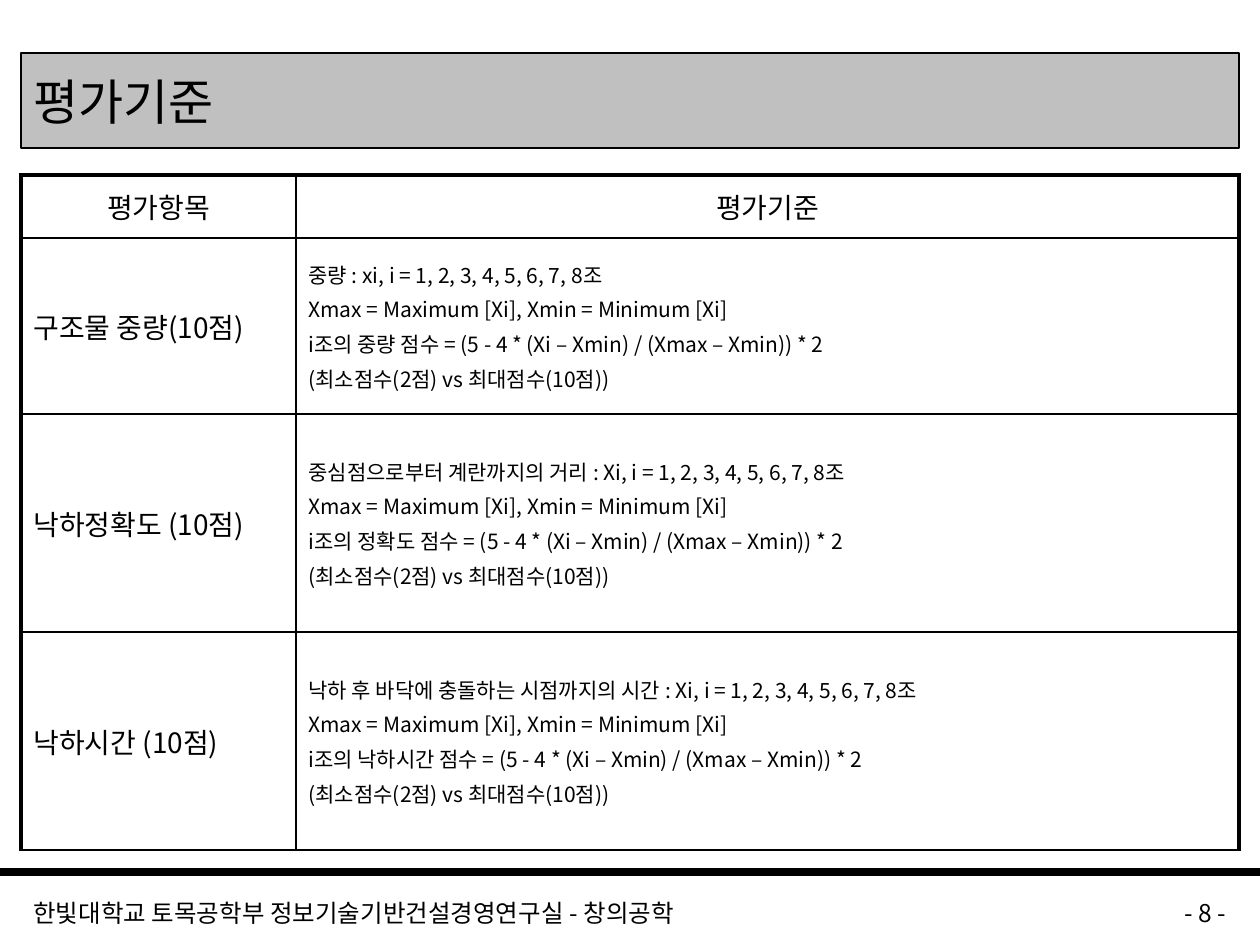
import pptx
import pptx.dml.color
import pptx.enum.shapes
import pptx.enum.text
import pptx.oxml
import pptx.oxml.ns
import pptx.util

PX = pptx.util.Inches(1) / 126
COLORS = {"ink": "000000", "band": "C0C0C0"}
FONT = "Noto Sans CJK KR"
ALIGN = pptx.enum.text.PP_ALIGN
ANCHOR = pptx.enum.text.MSO_ANCHOR
THIN, THICK = 1, 2.25

LEFT, WIDTH = 21, 1218
COLUMNS = [275, 943]
ROWS = [63, 176, 218, 218]

HEADINGS = ["평가항목", "평가기준"]
# Item, measured quantity, symbol of the measured value, name of the score
CRITERIA = [
    ("구조물 중량(10점)", "중량", "xi", "중량"),
    ("낙하정확도 (10점)", "중심점으로부터 계란까지의 거리", "Xi", "정확도"),
    ("낙하시간 (10점)", "낙하 후 바닥에 충돌하는 시점까지의 시간", "Xi", "낙하시간"),
]


def px(length):
    return pptx.util.Emu(round(length * PX))


def rgb(name):
    return pptx.dml.color.RGBColor.from_string(COLORS[name])


def apply_format(target, values):
    for attribute, value in values.items():
        setattr(target, attribute, value)


def write(frame, lines, size, alignment=ALIGN.LEFT, anchor=ANCHOR.TOP, space=0):
    """Fill a text frame with one paragraph per line; space is in points."""
    apply_format(frame, {"word_wrap": True, "vertical_anchor": anchor})
    frame.text = "\n".join(lines)
    for paragraph in frame.paragraphs:
        apply_format(paragraph, {"alignment": alignment,
                                 "space_before": pptx.util.Pt(space)})
        run = paragraph.runs[0]
        apply_format(run.font, {"name": FONT, "size": pptx.util.Pt(size), "bold": False})
        run.font.color.rgb = rgb("ink")
        east_asian = pptx.oxml.parse_xml(
            f'<a:ea {pptx.oxml.ns.nsdecls("a")} typeface="{FONT}"/>')
        run.font._element.find(pptx.oxml.ns.qn("a:latin")).addnext(east_asian)


def set_borders(cell, widths):
    """Draw the left, right, top and bottom borders, widths in points."""
    properties = cell._tc.get_or_add_tcPr()
    for index, (side, width) in enumerate(zip("LRTB", widths)):
        border = pptx.oxml.parse_xml(
            f'<a:ln{side} {pptx.oxml.ns.nsdecls("a")} w="{pptx.util.Pt(width)}">'
            f'<a:solidFill><a:srgbClr val="{COLORS["ink"]}"/></a:solidFill></a:ln{side}>')
        properties.insert(index, border)


def add_title(slide, text):
    title = slide.shapes.title
    apply_format(title, {"left": px(LEFT), "top": px(53),
                         "width": px(WIDTH), "height": px(95)})
    title.fill.solid()
    title.fill.fore_color.rgb = rgb("band")
    title.line.color.rgb = rgb("ink")
    title.line.width = pptx.util.Pt(0.75)
    title.text_frame.auto_size = pptx.enum.text.MSO_AUTO_SIZE.NONE
    write(title.text_frame, [text], 28, anchor=ANCHOR.MIDDLE)


def score_lines(quantity, symbol, score):
    return [
        f"{quantity} : {symbol}, i = 1, 2, 3, 4, 5, 6, 7, 8조",
        "Xmax = Maximum [Xi], Xmin = Minimum [Xi]",
        f"i조의 {score} 점수 = (5 - 4 * (Xi – Xmin) / (Xmax – Xmin)) * 2",
        "(최소점수(2점) vs 최대점수(10점))",
    ]


def add_criteria_table(slide):
    table = slide.shapes.add_table(len(ROWS), len(COLUMNS), px(LEFT), px(175),
                                   px(WIDTH), px(sum(ROWS))).table
    apply_format(table, {"first_row": False, "horz_banding": False})
    for column, width in zip(table.columns, COLUMNS):
        column.width = px(width)
    for row, height in zip(table.rows, ROWS):
        row.height = px(height)

    contents = [[[heading] for heading in HEADINGS]]
    contents += [[[item], score_lines(*rule)] for item, *rule in CRITERIA]
    for r, row_contents in enumerate(contents):
        for c, lines in enumerate(row_contents):
            cell = table.cell(r, c)
            cell.fill.background()
            size = 12 if r and c else 16
            write(cell.text_frame, lines, size, ALIGN.LEFT if r else ALIGN.CENTER,
                  space=size * 0.2)
            cell.vertical_anchor = ANCHOR.MIDDLE
            set_borders(cell, [THIN if c else THICK, THICK if c else THIN,
                               THIN if r else THICK, THIN])


def add_footer_rule(slide):
    rule = slide.shapes.add_connector(pptx.enum.shapes.MSO_CONNECTOR.STRAIGHT,
                                      px(0), px(872), px(1260), px(872))
    rule.line.color.rgb = rgb("ink")
    rule.line.width = pptx.util.Pt(4.5)
    rule._element.spPr.append(
        pptx.oxml.parse_xml(f'<a:effectLst {pptx.oxml.ns.nsdecls("a")}/>'))


def add_footer_text(slide, text, left, width, alignment):
    box = slide.shapes.add_textbox(px(left), px(892), px(width), px(32))
    write(box.text_frame, [text], 14, alignment)


def main():
    deck = pptx.Presentation()
    apply_format(deck, {"slide_width": px(1260), "slide_height": px(945)})
    slide = deck.slides.add_slide(deck.slide_layouts[5])
    add_footer_rule(slide)
    add_title(slide, "평가기준")
    add_criteria_table(slide)
    add_footer_text(slide, "한빛대학교 토목공학부 정보기술기반건설경영연구실 - 창의공학",
                    LEFT, 987, ALIGN.LEFT)
    add_footer_text(slide, "- 8 -", 1029, 210, ALIGN.RIGHT)
    deck.save("out.pptx")


if __name__ == "__main__":
    main()
